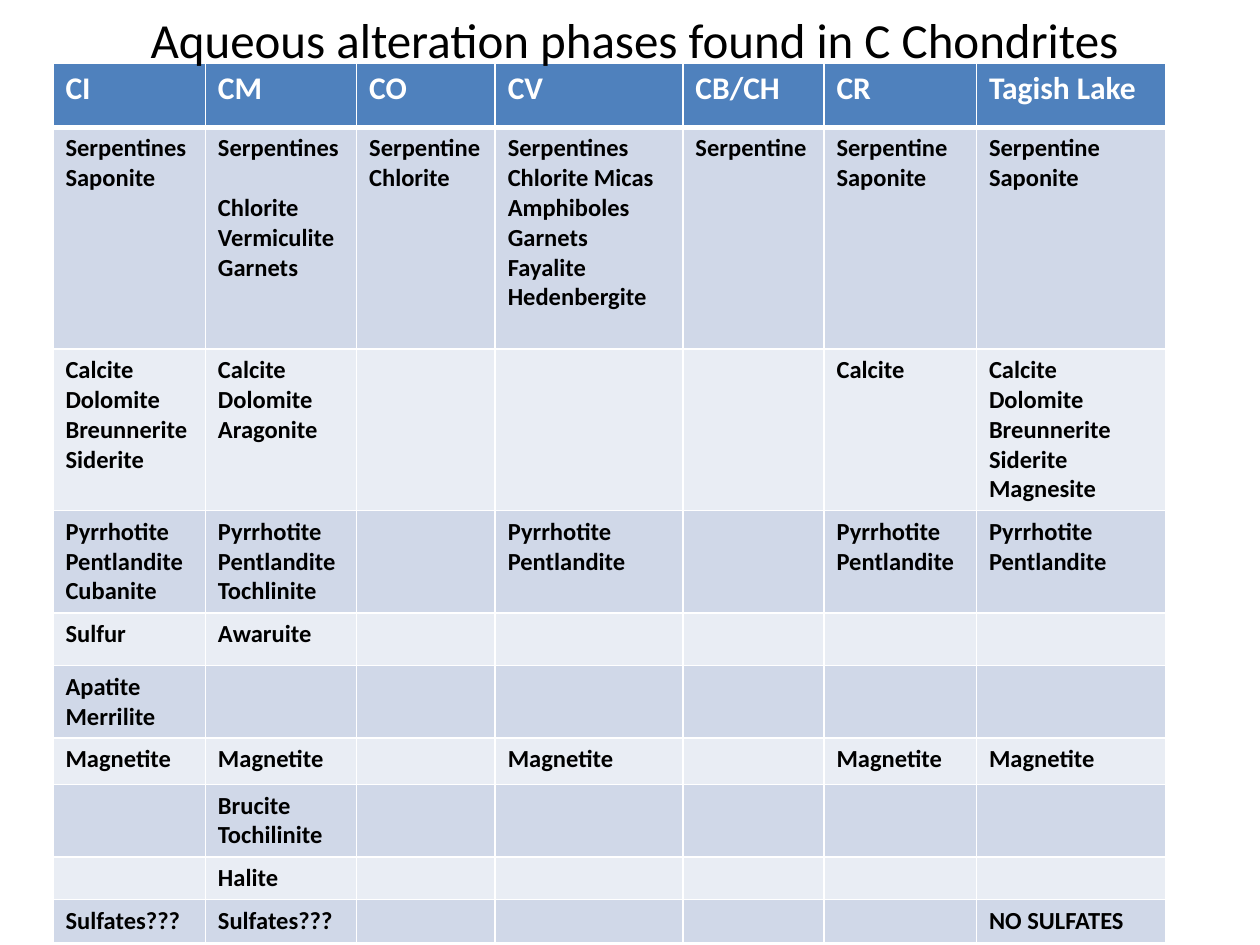
from lxml.etree import SubElement
from pptx import Presentation
from pptx.dml.color import RGBColor
from pptx.enum.text import MSO_ANCHOR, PP_ALIGN
from pptx.oxml.ns import qn
from pptx.util import Inches, Pt

WHITE = RGBColor(0xFF, 0xFF, 0xFF)
BLACK = RGBColor(0x00, 0x00, 0x00)
HEADER_BLUE = RGBColor(0x4F, 0x81, 0xBD)
BANDS = (RGBColor(0xE9, 0xED, 0xF4), RGBColor(0xD0, 0xD8, 0xE8))

COLUMN_WIDTHS = (1.21, 1.2, 1.1, 1.49, 1.12, 1.21, 1.5)
ROW_HEIGHTS = (0.51, 1.76, 1.28, 0.81, 0.42, 0.57, 0.37, 0.57, 0.34, 0.34)

SULFIDES = "Pyrrhotite Pentlandite"
CARBONATES = "Calcite Dolomite Breunnerite Siderite"
PHASES = (
    ("CI", "CM", "CO", "CV", "CB/CH", "CR", "Tagish Lake"),
    ("Serpentines Saponite", "Serpentines\nChlorite Vermiculite Garnets",
     "Serpentine Chlorite",
     "Serpentines Chlorite Micas Amphiboles Garnets\nFayalite Hedenbergite",
     "Serpentine", "Serpentine Saponite", "Serpentine Saponite"),
    (CARBONATES, "Calcite Dolomite Aragonite", "", "", "", "Calcite",
     CARBONATES + "\nMagnesite"),
    (SULFIDES + " Cubanite", SULFIDES + "\nTochlinite", "", SULFIDES, "",
     SULFIDES, SULFIDES),
    ("Sulfur", "Awaruite", "", "", "", "", ""),
    ("Apatite Merrilite", "", "", "", "", "", ""),
    ("Magnetite", "Magnetite", "", "Magnetite", "", "Magnetite", "Magnetite"),
    ("", "Brucite Tochilinite", "", "", "", "", ""),
    ("", "Halite", "", "", "", "", ""),
    ("Sulfates???", "Sulfates???", "", "", "", "", "NO SULFATES"),
)


def write_text(frame, text, size=14, color=BLACK, bold=False,
               align=PP_ALIGN.LEFT, gap=0):
    frame.word_wrap = True
    for index, line in enumerate(text.split("\n")):
        paragraph = frame.paragraphs[0] if index == 0 else frame.add_paragraph()
        paragraph.alignment = align
        if index and gap:
            paragraph.space_before = Pt(gap)
        if line:
            run = paragraph.add_run()
            run.text = line
            run.font.name = "Calibri"
            run.font.size = Pt(size)
            run.font.bold = bold
            run.font.color.rgb = color
        else:
            SubElement(paragraph._p, qn("a:endParaRPr"), sz=str(size * 100))


def paint_cell(cell, fill, top=1, bottom=1):
    properties = cell._tc.get_or_add_tcPr()
    for side, width in (("L", 1), ("R", 1), ("T", top), ("B", bottom)):
        border = SubElement(properties, qn("a:ln" + side), w=str(Pt(width)))
        paint = SubElement(border, qn("a:solidFill"))
        SubElement(paint, qn("a:srgbClr"), val=str(WHITE))
    cell.fill.solid()
    cell.fill.fore_color.rgb = fill


def add_phase_table(slide, left, top, width, height):
    table = slide.shapes.add_table(
        len(PHASES), len(COLUMN_WIDTHS), left, top, width, height).table
    for column, column_width in zip(table.columns, COLUMN_WIDTHS):
        column.width = Inches(column_width)
    for row, row_height in zip(table.rows, ROW_HEIGHTS):
        row.height = Inches(row_height)
    for row_index, phases in enumerate(PHASES):
        is_header = row_index == 0
        for column_index, phase in enumerate(phases):
            cell = table.cell(row_index, column_index)
            paint_cell(cell, HEADER_BLUE if is_header else BANDS[row_index % 2],
                       top=3 if row_index == 1 else 1,
                       bottom=3 if is_header else 1)
            write_text(cell.text_frame, phase, size=18 if is_header else 14,
                       color=WHITE if is_header else BLACK, bold=True,
                       gap=17 if phase.startswith("Serpentines\n") else 0)


def add_title(slide, left, top, width, height):
    title = slide.shapes.add_textbox(left, top, width, height)
    title.text_frame.vertical_anchor = MSO_ANCHOR.MIDDLE
    write_text(title.text_frame, "Aqueous alteration phases found in C Chondrites ",
               size=28, align=PP_ALIGN.CENTER)


def main():
    presentation = Presentation()
    presentation.slide_width = Inches(10)
    presentation.slide_height = Inches(7.5)
    slide = presentation.slides.add_slide(presentation.slide_layouts[6])
    add_phase_table(slide, Inches(0.42), Inches(0.5), Inches(sum(COLUMN_WIDTHS)),
                    Inches(sum(ROW_HEIGHTS)))
    add_title(slide, Inches(0.58), Inches(0), Inches(9), Inches(0.62))
    presentation.save("out.pptx")


if __name__ == "__main__":
    main()
